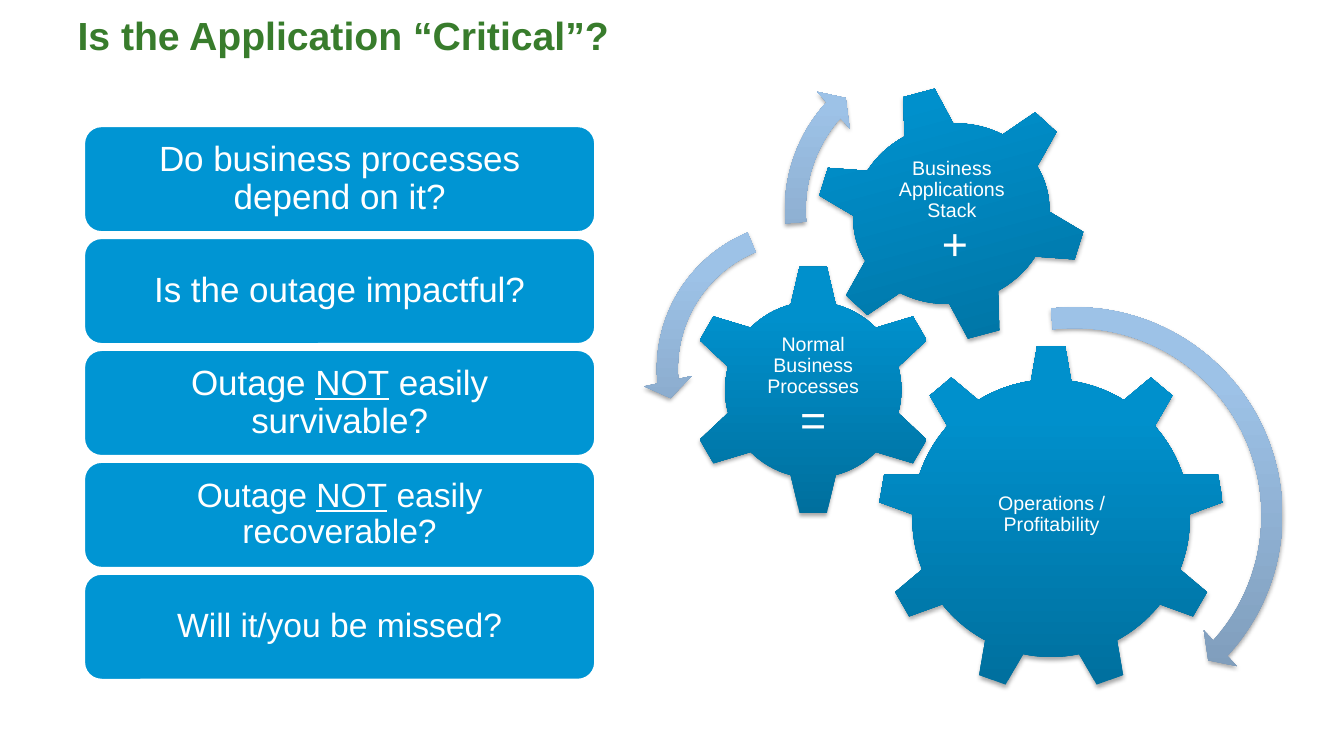
from dataclasses import dataclass

from pptx import Presentation
from pptx.dml.color import RGBColor
from pptx.enum.shapes import MSO_SHAPE as Shape
from pptx.enum.text import MSO_ANCHOR as Anchor, PP_ALIGN as Align
from pptx.oxml import parse_xml
from pptx.oxml.ns import nsdecls, qn
from pptx.util import Cm, Pt


@dataclass(frozen=True)
class Theme:
    font: str = "Arial"
    title: str = "387C2C"
    card: str = "0095D3"
    white: str = "FFFFFF"
    gear: tuple = ((0, "006F9D"), (80, "0090CC"), (100, "0091CD"))
    arrow: tuple = ((0, "7995B2"), (80, "9DC2E7"), (100, "9DC3EA"))
    title_size: float = 28
    card_size: float = 25
    small_card_size: float = 24
    gear_size: float = 14
    gap_size: float = 16
    sign_size: float = 32
    line_spacing: float = 0.9


THEME = Theme()


@dataclass(frozen=True)
class Box:
    left: float
    top: float
    width: float
    height: float

    def emu(self) -> tuple:
        return Cm(self.left), Cm(self.top), Cm(self.width), Cm(self.height)


@dataclass(frozen=True)
class Span:
    text: str
    size: float
    underline: bool = False
    break_after: bool = False


@dataclass(frozen=True)
class Card:
    spans: tuple


@dataclass(frozen=True)
class Gear:
    kind: Shape
    box: Box
    label_box: Box
    spans: tuple
    rotation: float = 0


@dataclass(frozen=True)
class Arrow:
    kind: Shape
    box: Box
    adjustments: tuple


def outage_spans(ending: str, size: float) -> tuple:
    return Span("Outage ", size), Span("NOT", size, underline=True), Span(ending, size)


CARDS = (
    Card((Span("Do business processes depend on it?", THEME.card_size),)),
    Card((Span("Is the outage impactful?", THEME.card_size),)),
    Card(outage_spans(" easily survivable?", THEME.card_size)),
    Card(outage_spans(" easily recoverable?", THEME.small_card_size)),
    Card((Span("Will it/you be missed?", THEME.small_card_size),)),
)
FIRST_CARD = Box(2.11, 3.17, 12.9, 2.69)
CARD_PITCH = 2.82

GEARS = (
    Gear(Shape.GEAR_9, Box(22.12, 8.69, 8.74, 8.74), Box(23.9, 10.72, 5.21, 4.5),
         (Span("Operations / Profitability", THEME.gear_size),)),
    Gear(Shape.GEAR_6, Box(17.32, 6.65, 6.35, 6.35), Box(18.92, 8.28, 3.15, 3.12),
         (Span("Normal Business Processes ", THEME.gear_size),
          Span("=", THEME.sign_size))),
    Gear(Shape.GEAR_6, Box(20.52, 2.16, 6.91, 6.45), Box(22.07, 3.56, 3.84, 3.68),
         (Span("Business Applications Stack", THEME.gear_size, break_after=True),
          Span(" ", THEME.gap_size), Span("+", THEME.sign_size)), 345),
)

ARROWS = (
    Arrow(Shape.CIRCULAR_ARROW, Box(21.49, 7.39, 11.18, 11.18),
          (0.047, 2.99, 25.435, 158.036, 0.055)),
    Arrow(Shape.LEFT_CIRCULAR_ARROW, Box(16.21, 5.23, 8.13, 8.13),
          (0.065, 4.3, 104.891, 148.378, 0.075)),
    Arrow(Shape.CIRCULAR_ARROW, Box(19.43, 0.91, 8.76, 8.76),
          (0.06, 3.941, 133.138, 105.082, 0.07)),
)


def write_spans(tf, spans: tuple) -> None:
    tf.word_wrap = True
    tf.vertical_anchor = Anchor.MIDDLE
    p = tf.paragraphs[0]
    p.alignment = Align.CENTER
    p.line_spacing = THEME.line_spacing
    for span in spans:
        r = p.add_run()
        r.text = span.text
        r.font.name = THEME.font
        r.font.size = Pt(span.size)
        r.font.color.rgb = RGBColor.from_string(THEME.white)
        if span.underline:
            r.font.underline = True
        if span.break_after:
            p.add_line_break()


def shade(sp, stops: tuple) -> None:
    sp.fill.gradient()
    sp.fill.gradient_angle = 90
    sp.line.fill.background()
    sp.shadow.inherit = False
    props = sp._element.spPr
    stop_list = props.find(".//" + qn("a:gsLst"))
    for old_stop in list(stop_list):
        stop_list.remove(old_stop)
    for percent, color in stops:
        stop_list.append(parse_xml(
            f'<a:gs {nsdecls("a")} pos="{percent * 1000}"><a:srgbClr val="{color}"/></a:gs>'))
    props.find(qn("a:effectLst")).append(parse_xml(
        f'<a:outerShdw {nsdecls("a")} blurRad="{Pt(3.1)}" dist="{Pt(1.8)}" dir="5400000" '
        'rotWithShape="0"><a:srgbClr val="000000"><a:alpha val="35000"/></a:srgbClr>'
        '</a:outerShdw>'))


def draw_title(slide, text: str) -> None:
    sp = slide.shapes.title
    sp.left, sp.top, sp.width, sp.height = Box(1.7, 0.2, 30.45, 1.63).emu()
    tf = sp.text_frame
    tf.text = text
    tf.vertical_anchor = Anchor.TOP
    tf.margin_top = Cm(0.23)
    p = tf.paragraphs[0]
    p.alignment = Align.LEFT
    p.line_spacing = THEME.line_spacing
    font = p.runs[0].font
    font.name, font.size, font.bold = THEME.font, Pt(THEME.title_size), True
    font.color.rgb = RGBColor.from_string(THEME.title)


def draw_card(slide, card: Card, row: int) -> None:
    first = FIRST_CARD
    box = Box(first.left, first.top + row * CARD_PITCH, first.width, first.height)
    sp = slide.shapes.add_shape(Shape.ROUNDED_RECTANGLE, *box.emu())
    sp.shadow.inherit = False
    sp.fill.solid()
    sp.fill.fore_color.rgb = RGBColor.from_string(THEME.card)
    sp.line.color.rgb = RGBColor.from_string(THEME.white)
    sp.line.width = Pt(2)
    write_spans(sp.text_frame, card.spans)


def draw_gear(slide, gear: Gear) -> None:
    sp = slide.shapes.add_shape(gear.kind, *gear.box.emu())
    sp.rotation = gear.rotation
    shade(sp, THEME.gear)
    tf = slide.shapes.add_textbox(*gear.label_box.emu()).text_frame
    tf.margin_left = tf.margin_right = tf.margin_top = tf.margin_bottom = Cm(0.05)
    write_spans(tf, gear.spans)


def draw_arrow(slide, arrow: Arrow) -> None:
    sp = slide.shapes.add_shape(arrow.kind, *arrow.box.emu())
    for i, value in enumerate(arrow.adjustments):
        sp.adjustments[i] = value
    shade(sp, THEME.arrow)


def main() -> None:
    prs = Presentation()
    prs.slide_width, prs.slide_height = Cm(33.87), Cm(19.05)
    slide = prs.slides.add_slide(prs.slide_layouts[5])
    draw_title(slide, "Is the Application “Critical”?")
    for gear in GEARS:
        draw_gear(slide, gear)
    for arrow in ARROWS:
        draw_arrow(slide, arrow)
    for row, card in enumerate(CARDS):
        draw_card(slide, card, row)
    prs.save("out.pptx")


if __name__ == "__main__":
    main()
